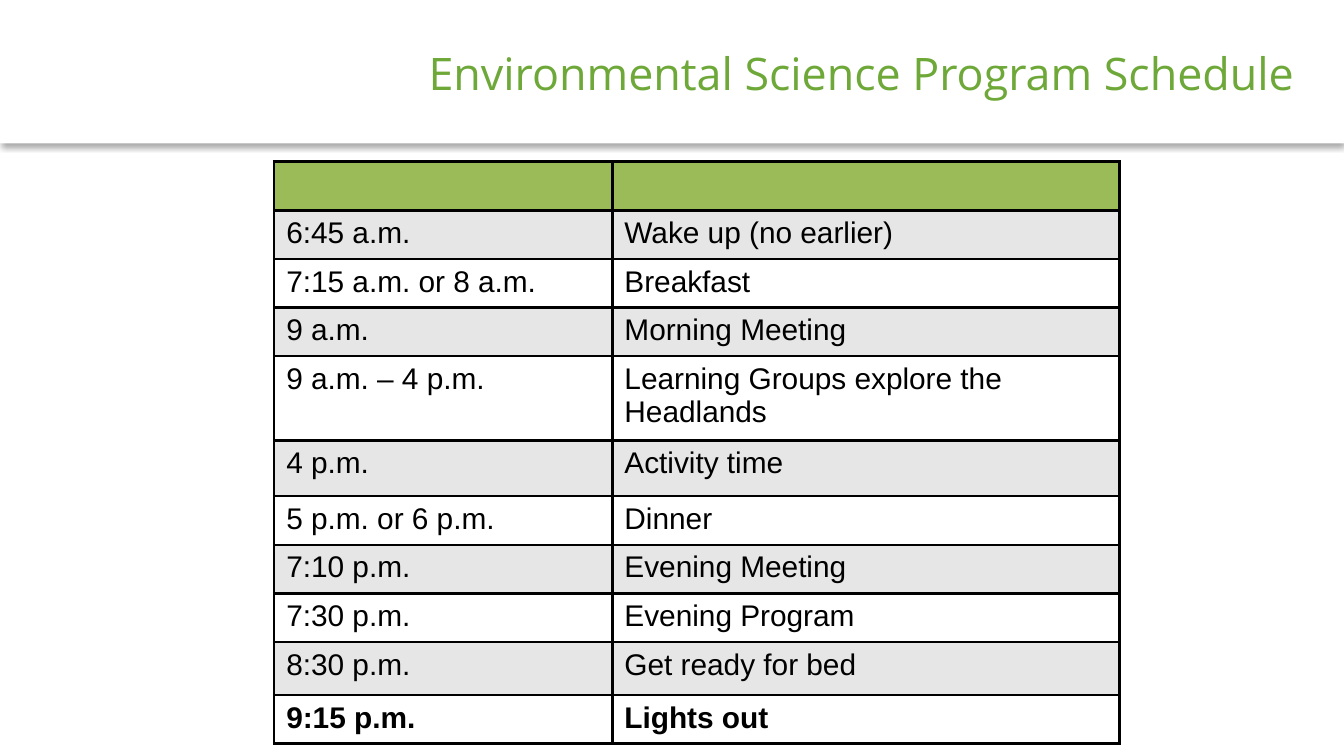
from lxml.etree import SubElement
from pptx import Presentation
from pptx.dml.color import RGBColor
from pptx.enum.shapes import MSO_SHAPE
from pptx.enum.text import PP_ALIGN
from pptx.oxml.ns import qn
from pptx.util import Cm, Pt

ROWS = [
    ("", "", 0.93),
    ("6:45 a.m.", "Wake up (no earlier)", 0.88),
    ("7:15 a.m. or 8 a.m.", "Breakfast", 0.88),
    ("9 a.m.", "Morning Meeting", 0.88),
    ("9 a.m. – 4 p.m.", "Learning Groups explore the Headlands", 1.48),
    ("4 p.m.", "Activity time", 1.05),
    ("5 p.m. or 6 p.m.", "Dinner", 0.88),
    ("7:10 p.m.", "Evening Meeting", 0.88),
    ("7:30 p.m.", "Evening Program", 0.88),
    ("8:30 p.m.", "Get ready for bed", 1.0),
    ("9:15 p.m.", "Lights out", 0.88),
]


def paint(part, color):
    """Give a fill or font a solid colour from a hex string."""
    if hasattr(part, "solid"):
        part.solid()
        part = part.fore_color
    else:
        part = part.color
    part.rgb = RGBColor.from_string(color)


def add_shade(shape):
    """Cast a soft black shadow straight down."""
    shape.shadow.inherit = False
    effects = shape._element.spPr.find(qn("a:effectLst"))
    shade = SubElement(effects, qn("a:outerShdw"), blurRad=str(Pt(3.1)),
                       dist=str(Pt(1.8)), dir="5400000", algn="t", rotWithShape="0")
    color = SubElement(shade, qn("a:srgbClr"), val="000000")
    SubElement(color, qn("a:alpha"), val="34000")


def add_header(slide, left, top, width, height):
    """Draw the white band with its title at the right."""
    band = slide.shapes.add_shape(MSO_SHAPE.RECTANGLE, Cm(left), Cm(top),
                                  Cm(width), Cm(height))
    paint(band.fill, "FFFFFF")
    band.line.fill.background()
    add_shade(band)
    box = slide.shapes.add_textbox(Cm(left + 6.83), Cm(top + 0.74), Cm(17.88), Cm(1.42))
    frame = box.text_frame
    frame.word_wrap = True
    frame.text = "Environmental Science Program Schedule"
    title = frame.paragraphs[0]
    title.alignment = PP_ALIGN.RIGHT
    font = title.runs[0].font
    font.name, font.size = "Open Sans", Pt(24)
    paint(font, "6DA838")


def add_edges(cell):
    """Rule all four sides of a cell in black."""
    props = cell._tc.get_or_add_tcPr()
    for at, side in enumerate(("lnL", "lnR", "lnT", "lnB")):
        line = SubElement(props, qn("a:" + side), w=str(Pt(1.5)))
        fill = SubElement(line, qn("a:solidFill"))
        SubElement(fill, qn("a:srgbClr"), val="000000")
        props.remove(line)
        props.insert(at, line)


def fill_cell(cell, text, color, bold):
    """Write and style one cell."""
    cell.margin_left = cell.margin_right = Cm(0.23)
    cell.margin_top = cell.margin_bottom = Cm(0.12)
    paint(cell.fill, color)
    add_edges(cell)
    para = cell.text_frame.paragraphs[0]
    if not text:
        SubElement(para._p, qn("a:endParaRPr"), sz="1600")
        return
    para.text = text
    font = para.runs[0].font
    font.name, font.size, font.bold = "Arial", Pt(16), bold
    paint(font, "000000")


def add_plan(slide, left, top, width, height):
    """Lay out the schedule table with striped rows."""
    table = slide.shapes.add_table(len(ROWS), 2, Cm(left), Cm(top),
                                   Cm(width), Cm(height)).table
    for col, share in zip(table.columns, (0.4, 0.6)):
        col.width = Cm(width * share)
    for at, (time, event, tall) in enumerate(ROWS):
        table.rows[at].height = Cm(tall)
        color = "9BBB59" if at == 0 else ("FFFFFF", "E6E6E6")[at % 2]
        for cell, text in zip(table.rows[at].cells, (time, event)):
            fill_cell(cell, text, color, at == len(ROWS) - 1)


def main():
    """Build and save the slide."""
    deck = Presentation()
    deck.slide_width, deck.slide_height = Cm(25.4), Cm(14.29)
    slide = deck.slides.add_slide(deck.slide_layouts[6])
    add_header(slide, 0, 0, 25.4, 2.71)
    add_plan(slide, 5.18, 3.05, 15.98, sum(row[2] for row in ROWS))
    deck.save("out.pptx")


if __name__ == "__main__":
    main()
